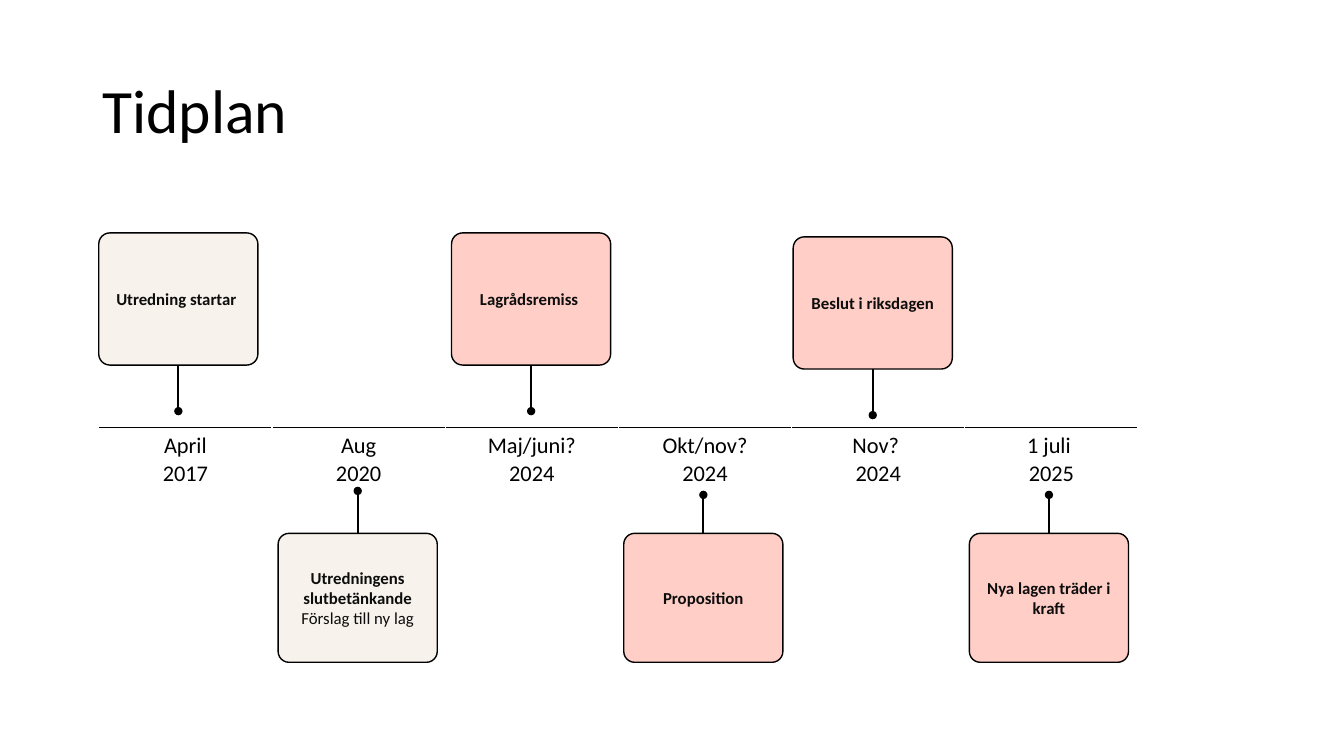
from lxml import etree
from pptx import Presentation
from pptx.dml.color import RGBColor
from pptx.enum.shapes import MSO_CONNECTOR as CONN, MSO_SHAPE as SHAPE
from pptx.enum.text import MSO_ANCHOR as ANCHOR, PP_ALIGN as ALIGN
from pptx.oxml import parse_xml
from pptx.oxml.ns import nsdecls, qn
from pptx.util import Cm, Pt


def rgb(value):
    return RGBColor.from_string(value)


class Deck:
    FONT, BLACK, BODY = "Calibri", "000000", "0D0D0D"

    def __init__(self, slide):
        self.s = slide

    def set_text(self, tf, lines, size, color, align=ALIGN.CENTER, bold_lines=0):
        tf.text = "\n".join(lines)
        for i, p in enumerate(tf.paragraphs):
            p.alignment = align
            for r in p.runs:
                r.font.name, r.font.size = self.FONT, Pt(size)
                r.font.bold = i < bold_lines
                r.font.color.rgb = rgb(color)

    def title(self, text, x, y, w, h):
        tf = self.s.shapes.add_textbox(Cm(x), Cm(y), Cm(w), Cm(h)).text_frame
        tf.word_wrap = True
        tf.vertical_anchor = ANCHOR.MIDDLE
        self.set_text(tf, [text], 44, self.BLACK, ALIGN.LEFT)
        tf.paragraphs[0].line_spacing = 0.9

    def date_row(self, dates, x, y, w, h):
        table = self.s.shapes.add_table(1, len(dates), Cm(x), Cm(y), Cm(w), Cm(h)).table
        table.first_row = table.horz_banding = False
        for i, lines in enumerate(dates):
            table.columns[i].width = Cm(w / len(dates))
            cell = table.cell(0, i)
            cell.fill.background()
            self.set_text(cell.text_frame, lines, 16, self.BLACK)
            # The top border is the time axis
            cell._tc.get_or_add_tcPr().insert(0, parse_xml(
                f'<a:lnT {nsdecls("a")} w="3175"><a:solidFill>'
                f'<a:srgbClr val="{self.BLACK}"/></a:solidFill></a:lnT>'))

    def box(self, lines, x, y, w, h, fill):
        sp = self.s.shapes.add_shape(SHAPE.ROUNDED_RECTANGLE, Cm(x), Cm(y), Cm(w), Cm(h))
        sp.adjustments[0] = 0.084
        sp.shadow.inherit = False
        sp.fill.solid()
        sp.fill.fore_color.rgb = rgb(fill)
        sp.line.color.rgb = rgb(self.BLACK)
        sp.line.width = Pt(1)
        tf = sp.text_frame
        tf.word_wrap = True
        tf.vertical_anchor = ANCHOR.MIDDLE
        self.set_text(tf, lines, 12, self.BODY, bold_lines=1)
        return sp

    def pin(self, box, side, end_y):
        x = box.left + box.width // 2
        line = self.s.shapes.add_connector(CONN.STRAIGHT, x, box.top, x, Cm(end_y))
        line.begin_connect(box, side)
        line.line.color.rgb = rgb(self.BLACK)
        line.line.width = Pt(1.25)
        etree.SubElement(line.line._get_or_add_ln(), qn("a:tailEnd"), type="oval")
        etree.SubElement(line._element.spPr, qn("a:effectLst"))


def main():
    prs = Presentation()
    prs.slide_width, prs.slide_height = Cm(33.87), Cm(19.05)
    deck = Deck(prs.slides.add_slide(prs.slide_layouts[6]))

    deck.title("Tidplan", 2.33, 1.01, 29.21, 3.68)

    # Time axis with dates
    dates = [("April", "2017"), ("Aug", "2020"), ("Maj/juni?", "2024"),
             ("Okt/nov?", "2024"), ("Nov? ", "2024"), ("1 juli ", "2025")]
    deck.date_row(dates, 2.49, 10.77, 26.19, 1.6)

    beige, pink = "F7F2EB", "FFCEC6"
    box_w = 4.01

    # Milestones above the axis: text, left, top, fill
    above = [("Utredning startar ", 2.49, 5.87, beige),
             ("Lagrådsremiss ", 11.38, 5.87, pink),
             ("Beslut i riksdagen", 19.99, 5.97, pink)]
    for text, x, y, fill in above:
        deck.pin(deck.box([text], x, y, box_w, 3.33, fill), 2, y + 4.49)

    # Milestones below the axis, evenly spaced: lines, pin end, fill
    below = [(("Utredningens slutbetänkande", "Förslag till ny lag"), 12.37, beige),
             (("Proposition",), 12.47, pink),
             (("Nya lagen träder i kraft",), 12.47, pink)]
    for i, (lines, end_y, fill) in enumerate(below):
        deck.pin(deck.box(lines, 7.01 + 8.71 * i, 13.44, box_w, 3.25, fill), 0, end_y)

    prs.save("out.pptx")


if __name__ == "__main__":
    main()
